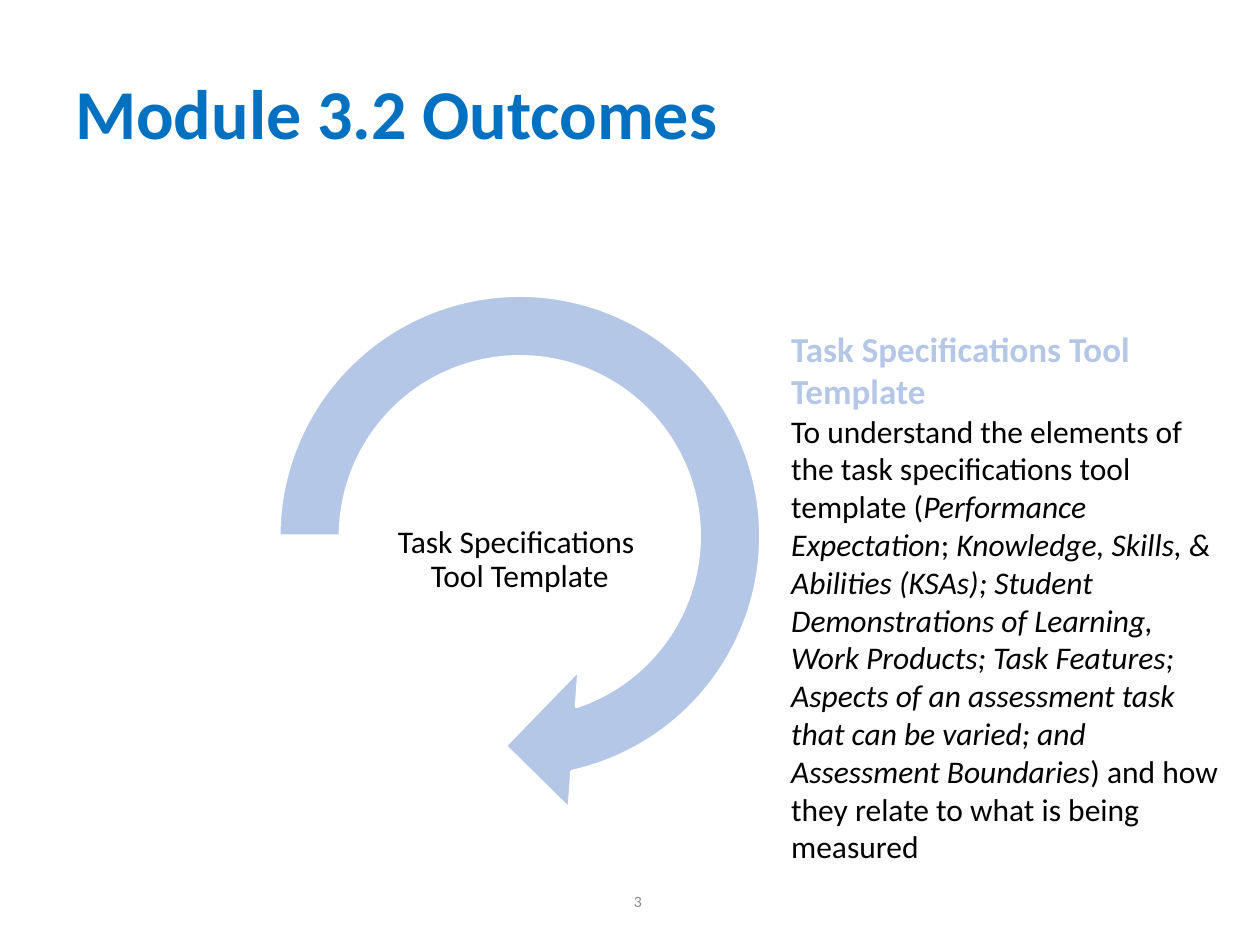
from dataclasses import dataclass

from pptx import Presentation
from pptx.dml.color import RGBColor
from pptx.enum import shapes, text
from pptx.util import Cm, Pt


@dataclass(frozen=True)
class Theme:
    font: str = "Calibri"
    title_color: RGBColor = RGBColor(0x00, 0x70, 0xC0)
    accent: RGBColor = RGBColor(0xB4, 0xC7, 0xE7)
    ink: RGBColor = RGBColor(0, 0, 0)
    muted: RGBColor = RGBColor(0x8C, 0x8C, 0x8C)
    paper: RGBColor = RGBColor(0xFF, 0xFF, 0xFF)
    title_size: Pt = Pt(40)
    heading_size: Pt = Pt(20)
    body_size: Pt = Pt(18)
    number_size: Pt = Pt(9)


THEME = Theme()

OUTCOME_RUNS = [
    ("To understand the elements of the task specifications tool template (", False),
    ("Performance Expectation", True),
    ("; ", False),
    ("Knowledge, Skills, & Abilities (KSAs); Student Demonstrations of Learning, "
     "Work Products; Task Features; Aspects of an assessment task that can be varied; "
     "and Assessment Boundaries", True),
    (") and how they relate to what is being measured", False),
]


def add_frame(slide, box, anchor=text.MSO_ANCHOR.MIDDLE):
    """Add a wrapping text box at box (left, top, width, height in cm)."""
    frame = slide.shapes.add_textbox(*map(Cm, box)).text_frame
    frame.word_wrap = True
    frame.vertical_anchor = anchor
    return frame


def style(paragraph, size, color, bold=False):
    font = paragraph.font
    font.name, font.size, font.bold = THEME.font, size, bold
    font.color.rgb = color


def add_title(slide, box):
    paragraph = add_frame(slide, box).paragraphs[0]
    paragraph.text = "Module 3.2 Outcomes"
    paragraph.line_spacing = 0.9
    style(paragraph, THEME.title_size, THEME.title_color, bold=True)


def add_cycle(slide, box):
    """Add the circular arrow with its label inside the ring."""
    left, top, width, height = box
    arrow = slide.shapes.add_shape(shapes.MSO_SHAPE.CIRCULAR_ARROW, *map(Cm, box))
    for index, value in enumerate((0.11, 11.42, 45, 108, 0.125)):
        arrow.adjustments[index] = value
    arrow.shadow.inherit = False
    arrow.fill.solid()
    arrow.fill.fore_color.rgb = THEME.accent
    arrow.line.color.rgb = THEME.paper
    arrow.line.width = Pt(2)

    label_width, label_height = 6.3, 3.15
    frame = add_frame(slide, (left + (width - label_width) / 2, top + 4.57,
                              label_width, label_height))
    frame.margin_left = frame.margin_right = Cm(0.03)
    frame.margin_top = frame.margin_bottom = Cm(0.03)
    frame.text = "Task Specifications \nTool Template"
    for paragraph in frame.paragraphs:
        paragraph.alignment = text.PP_ALIGN.CENTER
        paragraph.line_spacing = 0.9
        style(paragraph, THEME.body_size, THEME.ink)
    frame.paragraphs[-1].space_after = Pt(6.3)


def add_outcome(slide, box):
    frame = add_frame(slide, box, text.MSO_ANCHOR.TOP)
    heading = frame.paragraphs[0]
    heading.text = "Task Specifications Tool Template"
    style(heading, THEME.heading_size, THEME.accent, bold=True)
    body = frame.add_paragraph()
    style(body, THEME.body_size, THEME.ink)
    for words, italic in OUTCOME_RUNS:
        run = body.add_run()
        run.text = words
        run.font.italic = italic


def add_page_number(slide, box):
    paragraph = add_frame(slide, box).paragraphs[0]
    paragraph.text = "3"
    paragraph.alignment = text.PP_ALIGN.RIGHT
    style(paragraph, THEME.number_size, THEME.muted)


def main():
    presentation = Presentation()
    presentation.slide_width, presentation.slide_height = Cm(25.4), Cm(19.05)
    slide = presentation.slides.add_slide(presentation.slide_layouts[6])
    add_page_number(slide, (7.47, 17.65, 5.72, 1.02))
    add_title(slide, (1.27, 0.76, 22.86, 3.18))
    add_cycle(slide, (4.83, 5.16, 11.3, 11.3))
    add_outcome(slide, (15.7, 6.48, 9.14, 11.96))
    presentation.save("out.pptx")


if __name__ == "__main__":
    main()
